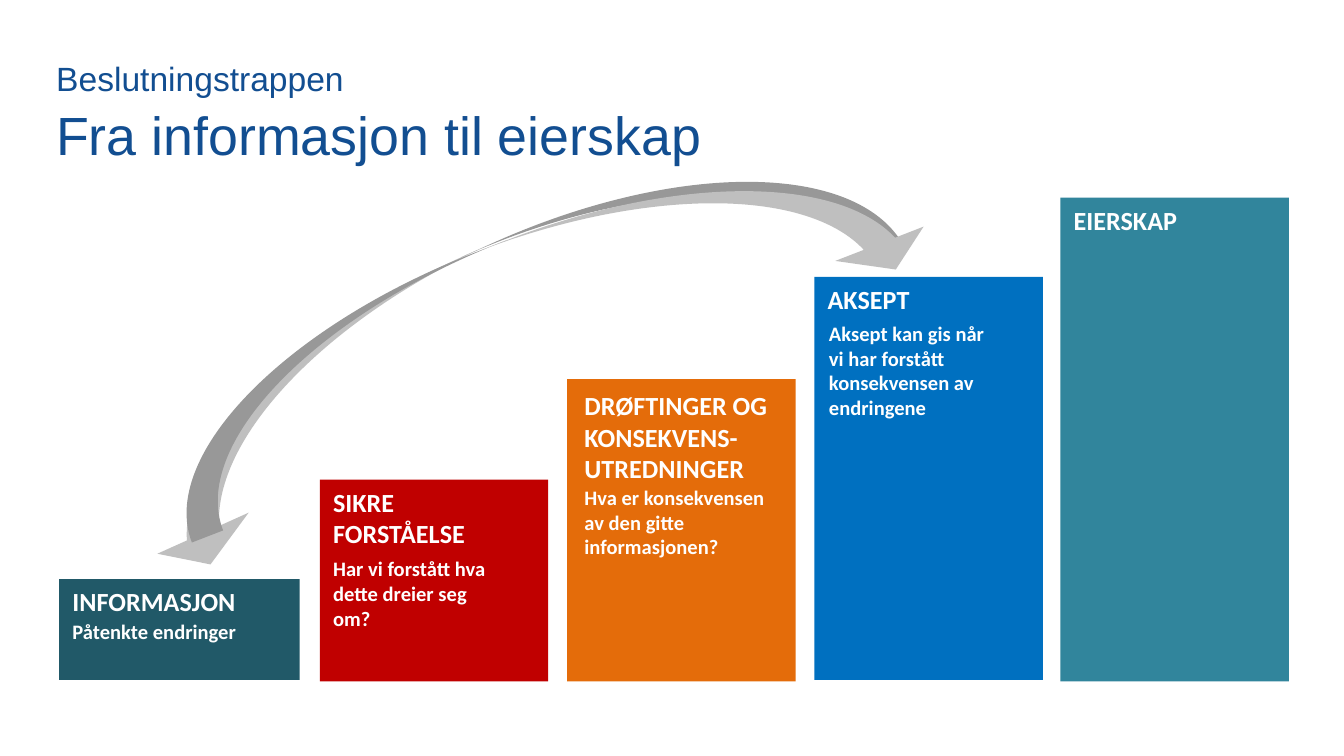
from pptx import Presentation
from pptx.dml.color import RGBColor
from pptx.enum.shapes import MSO_SHAPE
from pptx.enum.text import MSO_ANCHOR, PP_ALIGN
from pptx.util import Inches, Pt

COLORS = {
    "title": "124E91",
    "text": "FFFFFF",
    "information": "215968",
    "understanding": "C00000",
    "discussion": "E46C0A",
    "acceptance": "0070C0",
    "ownership": "31859C",
    "arrow": "BFBFBF",
}


def write_text(shape, paragraphs, size=14, font="Calibri", color="text",
               bold=True, anchor=MSO_ANCHOR.TOP):
    """Fill a shape with paragraphs, each a string or a list of (text, size) runs."""
    frame = shape.text_frame
    frame.word_wrap = True
    frame.vertical_anchor = anchor
    for index, content in enumerate(paragraphs):
        paragraph = frame.add_paragraph() if index else frame.paragraphs[0]
        paragraph.alignment = PP_ALIGN.LEFT
        runs = [(content, size)] if isinstance(content, str) else content
        for text, run_size in runs:
            if text.startswith("\n"):
                paragraph.add_line_break()
            run = paragraph.add_run()
            run.text = text.lstrip("\n")
            run.font.size = Pt(run_size)
            run.font.name = font
            run.font.bold = bold
            run.font.color.rgb = RGBColor.from_string(COLORS[color])


class StairSlide:
    """Hold the style and the current slide, and draw its elements."""

    step_width = 1.7
    arrow_adjustments = (0.199, 0.564, 0.178)

    def __init__(self, slide):
        """Remember the slide to draw on."""
        self.slide = slide

    def shape(self, kind, box, color):
        """Add a filled preset shape without line or shadow."""
        shape = self.slide.shapes.add_shape(kind, *map(Inches, box))
        shape.shadow.inherit = False
        shape.fill.solid()
        shape.fill.fore_color.rgb = RGBColor.from_string(COLORS[color])
        shape.line.fill.background()
        return shape

    def step(self, left, top, height, color, heading=(), width=step_width):
        """Add one step of the staircase with its heading."""
        shape = self.shape(MSO_SHAPE.RECTANGLE, (left, top, width, height), color)
        if heading:
            write_text(shape, heading)

    def text(self, box, paragraphs, **style):
        """Add a wrapping text box."""
        write_text(self.slide.shapes.add_textbox(*map(Inches, box)), paragraphs, **style)

    def arrow(self, box, rotation, flipped=False):
        """Add a curved arrow over the staircase."""
        shape = self.shape(MSO_SHAPE.CURVED_UP_ARROW, box, "arrow")
        for index, value in enumerate(self.arrow_adjustments):
            shape.adjustments[index] = value
        shape.rotation = rotation
        if flipped:
            shape._element.spPr.xfrm.set("flipV", "1")


def main():
    """Build and save the decision staircase."""
    presentation = Presentation()
    presentation.slide_width = Inches(10)
    presentation.slide_height = Inches(10 * 9 / 16)
    stairs = StairSlide(presentation.slides.add_slide(presentation.slide_layouts[6]))

    title = [("Beslutningstrappen", 18), (" ", 28.8),
             ("\nFra informasjon til eierskap", 28.8)]
    stairs.text((0.32, 0.35, 9, 0.94), [title], font="Arial", color="title",
                bold=False, anchor=MSO_ANCHOR.BOTTOM)

    stairs.step(0.44, 4.31, 0.75, "information", ["INFORMASJON"], width=1.79)
    stairs.step(2.38, 3.57, 1.5, "understanding", ["SIKRE", "FORSTÅELSE"])
    stairs.step(4.22, 2.82, 2.25, "discussion")
    stairs.step(6.06, 2.06, 3, "acceptance", ["AKSEPT"])
    stairs.step(7.89, 1.47, 3.6, "ownership", ["EIERSKAP"])

    stairs.text((2.38, 4.09, 1.45, 0.66), ["Har vi forstått hva dette dreier seg om?"],
                size=11)
    stairs.text((6.07, 2.34, 1.36, 0.84),
                ["Aksept kan gis når vi har forstått konsekvensen av endringene"], size=11)
    stairs.arrow((0.69, 1.85, 6.05, 1.32), 155.8)
    stairs.text((4.25, 2.85, 1.69, 0.96), ["DRØFTINGER OG KONSEKVENS-UTREDNINGER"])
    stairs.text((0.44, 4.56, 1.79, 0.29), ["Påtenkte endringer"], size=11)
    stairs.text((4.25, 3.56, 1.55, 0.66),
                ["Hva er konsekvensen av den gitte informasjonen?"], size=11)
    stairs.arrow((1, 1.75, 5.97, 1.25), 338.8, flipped=True)

    presentation.save("out.pptx")


if __name__ == "__main__":
    main()
